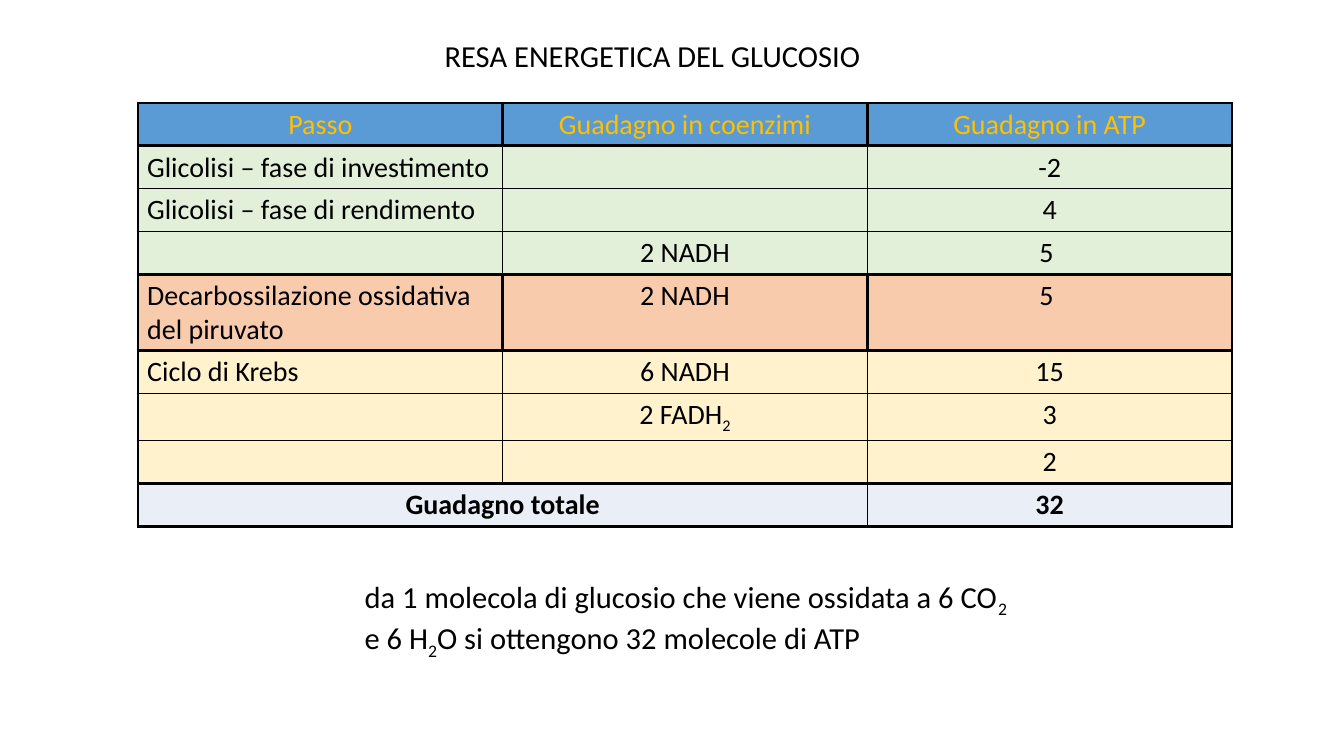
import pptx
import pptx.util
import pptx.dml.color
import pptx.enum.text
import pptx.oxml

Pt = pptx.util.Pt
ALIGN = pptx.enum.text.PP_ALIGN
ANCHOR = pptx.enum.text.MSO_ANCHOR
NS = "http://schemas.openxmlformats.org/drawingml/2006/main"
HUES = {"ink": "000000", "gold": "FFC000", "blue": "5B9BD5", "green": "E2F0D9",
        "peach": "F8CBAD", "cream": "FFF2CC", "pale": "EAEFF7"}
THICK, THIN = 2.25, 1


class Page:
    """Holds the style and the current slide."""
    face = "Calibri"
    frame = {"word_wrap": True, "vertical_anchor": ANCHOR.TOP,
             "margin_left": Pt(7.2), "margin_right": Pt(7.2),
             "margin_top": Pt(3.6), "margin_bottom": Pt(3.6)}
    inset = {"margin_left": Pt(6.54), "margin_right": Pt(6.54),
             "margin_top": Pt(3.27), "margin_bottom": Pt(3.27)}

    def __init__(self, deck):
        self.slide = deck.slides.add_slide(deck.slide_layouts[5])

    def style(self, item, values):
        for name, value in values.items():
            setattr(item, name, value)

    def label(self, frame, text, align, size, hue="ink", bold=False):
        """Fill a frame; text between bars is set as subscript."""
        para = frame.paragraphs[0]
        para.alignment = align
        for n, part in enumerate(text.split("|")):
            if not part:
                continue
            run = para.add_run()
            run.text = part
            self.style(run.font, {"name": self.face, "size": Pt(size), "bold": bold})
            run.font.color.rgb = pptx.dml.color.RGBColor.from_string(HUES[hue])
            if n % 2:
                run._r.get_or_add_rPr().set("baseline", "-25000")

    def title(self, text, box):
        shape = self.slide.shapes.title
        self.style(shape, dict(zip(("left", "top", "width", "height"), map(Pt, box))))
        self.fit(shape, text)

    def note(self, text, box):
        self.fit(self.slide.shapes.add_textbox(*map(Pt, box)), text)

    def fit(self, shape, text):
        self.style(shape.text_frame, self.frame)
        self.label(shape.text_frame, text, ALIGN.JUSTIFY, 21.8)

    def edge(self, cell, sides):
        props = cell._tc.get_or_add_tcPr()
        for n, (side, width) in enumerate(sides.items()):
            props.insert(n, pptx.oxml.parse_xml(
                f'<a:ln{side} xmlns:a="{NS}" w="{int(Pt(width))}"><a:solidFill>'
                f'<a:srgbClr val="{HUES["ink"]}"/></a:solidFill></a:ln{side}>'))

    def table(self, groups, box, tall):
        """Draw groups of rows, each with its fill and inner line width."""
        count = sum(len(group["rows"]) for group in groups)
        grid = self.slide.shapes.add_table(count, 3, *map(Pt, box)).table
        self.style(grid, {"first_row": False, "horz_banding": False})
        for row in grid.rows:
            row.height = Pt(26.6)
        grid.rows[tall].height = Pt(45.4)
        lines = iter(range(count))
        for group in groups:
            last = len(group["rows"]) - 1
            for n, texts in enumerate(group["rows"]):
                line = next(lines)
                for col, text in enumerate(texts):
                    cell = grid.cell(line, col)
                    self.style(cell, self.inset)
                    self.edge(cell, {
                        "L": THICK if col == 0 else group["inner"],
                        "R": THICK if col == 2 else group["inner"],
                        "T": THICK if n == 0 else THIN,
                        "B": THICK if n == last else THIN})
                    cell.fill.solid()
                    cell.fill.fore_color.rgb = pptx.dml.color.RGBColor.from_string(
                        HUES[group["fill"]])
                    left = col == 0 and not group.get("mid")
                    self.label(cell.text_frame, text, ALIGN.LEFT if left else ALIGN.CENTER,
                               20, group.get("hue", "ink"), group.get("bold", False))
        return grid


STEPS = [
    {"fill": "blue", "inner": THICK, "hue": "gold", "mid": True,
     "rows": [("Passo", "Guadagno in coenzimi", "Guadagno in ATP")]},
    {"fill": "green", "inner": THIN,
     "rows": [("Glicolisi – fase di investimento", "", "-2"),
              ("Glicolisi – fase di rendimento", "", "4"),
              ("", "2 NADH", "5 ")]},
    {"fill": "peach", "inner": THICK,
     "rows": [("Decarbossilazione ossidativa del piruvato", "2 NADH", "5 ")]},
    {"fill": "cream", "inner": THIN,
     "rows": [("Ciclo di Krebs", "6 NADH", "15"),
              ("", "2 FADH|2|", "3"),
              ("", "", "2")]},
    {"fill": "pale", "inner": THIN, "bold": True, "mid": True,
     "rows": [("Guadagno totale", "", "32")]},
]


def main():
    deck = pptx.Presentation()
    deck.slide_width, deck.slide_height = Pt(960), Pt(540)
    page = Page(deck)

    # Title
    page.title("RESA ENERGETICA DEL GLUCOSIO", (310.3, 23, 401, 33.8))

    # Closing statement
    page.note("da 1 molecola di glucosio che viene ossidata a 6 CO|2| e 6 H|2|O "
              "si ottengono 32 molecole di ATP", (253.4, 409, 473, 59.8))

    # Energy table, with the total across two columns
    grid = page.table(STEPS, (98.6, 73.6, 781.5, 258.2), tall=4)
    grid.cell(8, 0).merge(grid.cell(8, 1))

    deck.save("out.pptx")


if __name__ == "__main__":
    main()
